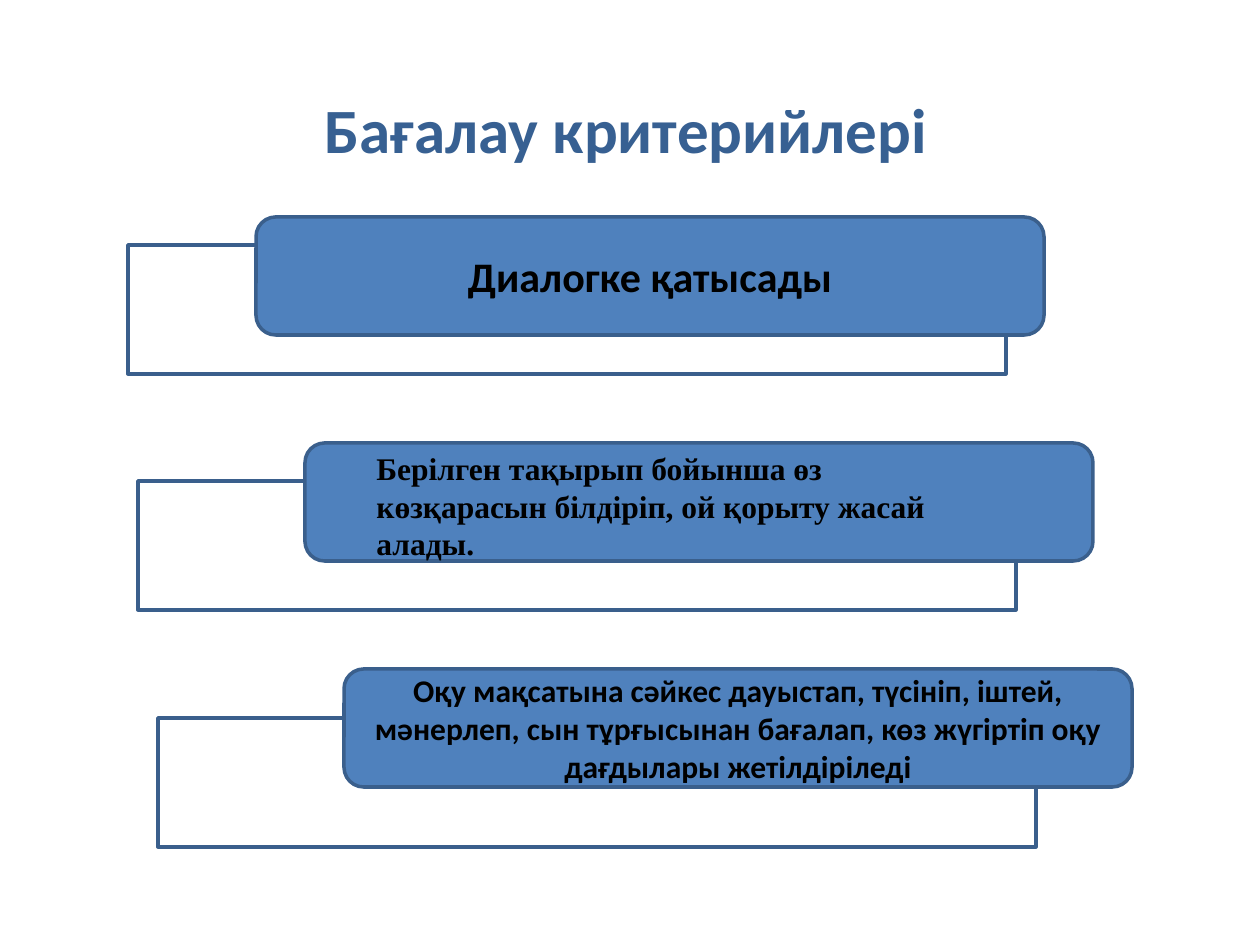
from pptx import Presentation
from pptx import util as u
from pptx.dml.color import RGBColor
from pptx.enum import shapes, text

PX = u.Inches(1) / 126
SLIDE_SIZE = (1260, 945)
FRAME_SIZE = (878, 129)
CARD_SIZE = (788, 118)
OUTLINE = "3A5F8C"
HEADING = {"size": u.Pt(36), "name": "Calibri", "bold": True}
LARGE = {"size": u.Pt(24), "name": "Calibri", "bold": True}
SMALL = {"size": u.Pt(18), "name": "Calibri", "bold": True}
SERIF = {"size": u.Pt(18), "name": "Times New Roman", "bold": True}


def px(*lengths):
    return [u.Emu(round(length * PX)) for length in lengths]


def color(value):
    return RGBColor.from_string(value)


def write(holder, wording, font_format, ink="000000", align=text.PP_ALIGN.CENTER):
    frame = holder.text_frame
    frame.word_wrap = True
    frame.vertical_anchor = text.MSO_ANCHOR.MIDDLE
    paragraph = frame.paragraphs[0]
    paragraph.alignment = align
    run = paragraph.add_run()
    run.text = wording
    for attribute, value in font_format.items():
        setattr(run.font, attribute, value)
    run.font.color.rgb = color(ink)


def add_text(slide, box, wording, font_format, **options):
    label = slide.shapes.add_textbox(*px(*box))
    write(label, wording, font_format, **options)
    return label


def add_panel(slide, preset, position, size, fill):
    panel = slide.shapes.add_shape(preset, *px(*position, *size))
    panel.shadow.inherit = False
    panel.fill.solid()
    panel.fill.fore_color.rgb = color(fill)
    panel.line.color.rgb = color(OUTLINE)
    panel.line.width = u.Pt(2)
    return panel


def add_frame(slide, position):
    return add_panel(slide, shapes.MSO_SHAPE.RECTANGLE, position, FRAME_SIZE, "FFFFFF")


def add_card(slide, position):
    return add_panel(slide, shapes.MSO_SHAPE.ROUNDED_RECTANGLE, position, CARD_SIZE, "4F81BD")


def main():
    deck = Presentation()
    deck.slide_width, deck.slide_height = px(*SLIDE_SIZE)
    slide = deck.slides.add_slide(deck.slide_layouts[6])

    add_text(slide, (59, 49, 1134, 158), "Бағалау критерийлері", HEADING, ink="376092")
    for position in ((128, 245), (138, 481), (158, 718)):
        add_frame(slide, position)

    dialogue = add_card(slide, (256, 217))
    write(dialogue, "Диалогке қатысады", LARGE)
    reading = add_card(slide, (344, 669))
    write(
        reading,
        "Оқу мақсатына сәйкес дауыстап, түсініп, іштей, мәнерлеп, сын тұрғысынан "
        "бағалап, көз жүгіртіп оқу дағдылары жетілдіріледі",
        SMALL,
    )
    add_card(slide, (305, 443))
    opinion = add_text(
        slide,
        (364, 442, 639, 127),
        "Берілген тақырып бойынша өз көзқарасын білдіріп, ой қорыту жасай алады.",
        SERIF,
        align=text.PP_ALIGN.LEFT,
    )
    opinion.text_frame.auto_size = text.MSO_AUTO_SIZE.SHAPE_TO_FIT_TEXT

    deck.save("out.pptx")


if __name__ == "__main__":
    main()
